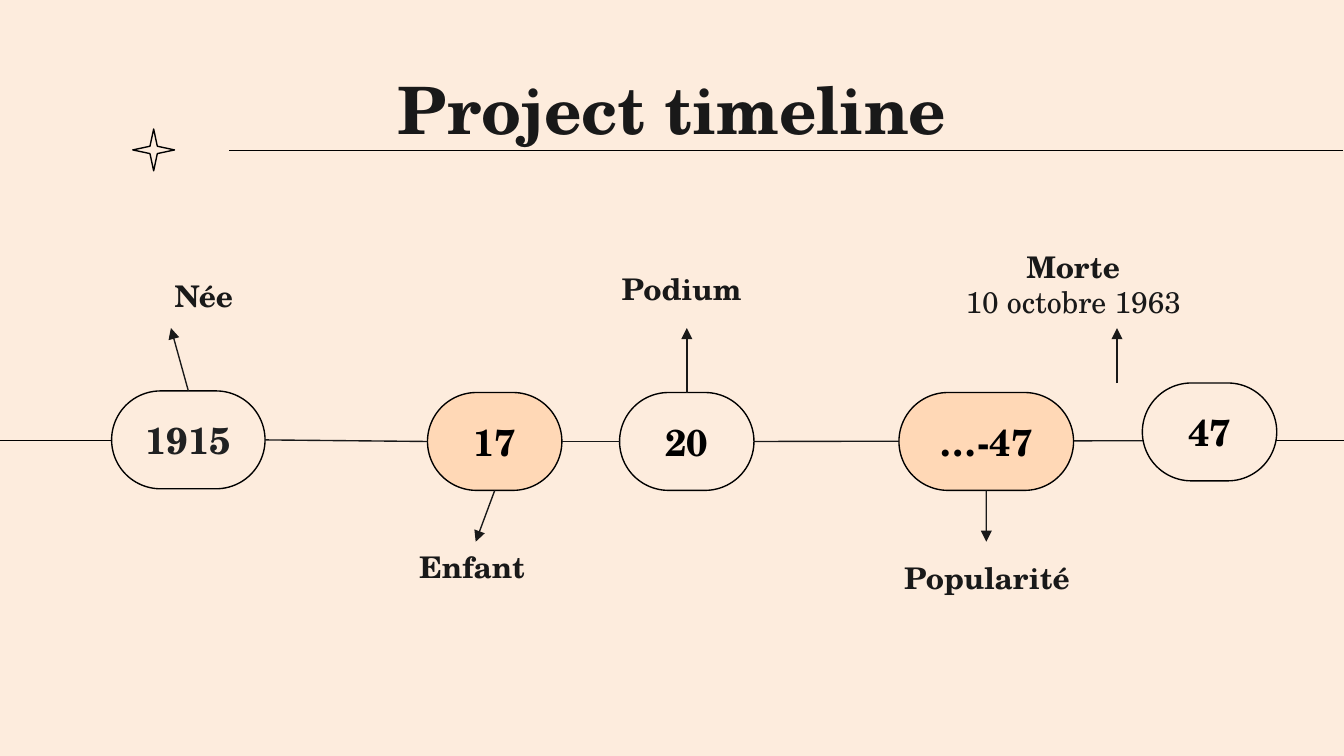
"""Build the project timeline slide."""
import lxml.etree
import pptx
import pptx.dml.color
import pptx.enum.shapes
import pptx.enum.text
import pptx.oxml.ns
import pptx.util
from pptx.util import Cm

RGBColor = pptx.dml.color.RGBColor
SHAPE = pptx.enum.shapes.MSO_SHAPE
CREAM = RGBColor(0xFD, 0xEC, 0xDD)
PEACH = RGBColor(0xFF, 0xD8, 0xB6)
BLACK = RGBColor(0x00, 0x00, 0x00)
INK = RGBColor(0x19, 0x19, 0x19)
SLATE = RGBColor(0x20, 0x21, 0x22)
FONT = "TeX Gyre Schola"
TOP, LEFT, BOTTOM, RIGHT = range(4)

TITLE = "Project timeline"
AXIS_Y = 8.33
PILL_HEIGHT = 1.85
ARROW_UP_Y, ARROW_DOWN_Y = 6.2, 10.24

PILLS = [
    ("1915", 2.11, 7.39, 2.9, CREAM, SLATE),
    ("17", 8.08, 7.42, 2.54, PEACH, BLACK),
    ("20", 11.71, 7.42, 2.54, CREAM, BLACK),
    ("…-47", 16.99, 7.42, 3.3, PEACH, BLACK),
    ("47", 21.59, 7.24, 2.54, CREAM, BLACK),
]
LABELS = [
    (["Née"], 1.3, 5.11),
    (["Enfant "], 6.45, 10.24),
    (["Podium "], 10.41, 4.98),
    (["Morte", "10 octobre 1963"], 17.73, 4.9),
    (["Popularité"], 16.1, 10.44),
]
ARROWS = [
    ("1915", TOP, 3.23, ARROW_UP_Y),
    ("17", BOTTOM, 8.99, ARROW_DOWN_Y),
    ("20", TOP, 12.98, ARROW_UP_Y),
    ("…-47", BOTTOM, 18.64, ARROW_DOWN_Y),
]
LINKS = [("1915", "17"), ("17", "20")]


def write(box, lines, size, color):
    frame = box.text_frame
    frame.word_wrap = True
    frame.vertical_anchor = pptx.enum.text.MSO_ANCHOR.MIDDLE
    frame.margin_left = frame.margin_right = Cm(0.25)
    frame.margin_top = frame.margin_bottom = Cm(0.25)
    frame.text = "\n".join(lines)
    for index, para in enumerate(frame.paragraphs):
        para.alignment = pptx.enum.text.PP_ALIGN.CENTER
        para.font.name = FONT
        para.font.size = pptx.util.Pt(size)
        para.font.bold = index == 0
        para.font.color.rgb = color


def add_text(page, lines, left, top, width, height, size):
    box = page.shapes.add_textbox(Cm(left), Cm(top), Cm(width), Cm(height))
    write(box, lines, size, INK)


def add_line(page, start, end, color, arrow=False):
    points = [Cm(value) for value in (*start, *end)]
    line = page.shapes.add_connector(
        pptx.enum.shapes.MSO_CONNECTOR.STRAIGHT, *points)
    line.line.color.rgb = color
    line.line.width = pptx.util.Pt(0.75)
    properties = line._element.spPr
    if arrow:
        outline = properties.find(pptx.oxml.ns.qn("a:ln"))
        lxml.etree.SubElement(
            outline, pptx.oxml.ns.qn("a:tailEnd"), type="triangle")
    lxml.etree.SubElement(properties, pptx.oxml.ns.qn("a:effectLst"))
    return line


def add_outlined(page, kind, left, top, width, height, adjustment):
    shape = page.shapes.add_shape(
        kind, Cm(left), Cm(top), Cm(width), Cm(height))
    shape.adjustments[0] = adjustment
    shape.shadow.inherit = False
    shape.fill.background()
    shape.line.color.rgb = BLACK
    shape.line.width = pptx.util.Pt(0.75)
    return shape


def main():
    deck = pptx.Presentation()
    deck.slide_width, deck.slide_height = Cm(25.4), Cm(14.29)
    page = deck.slides.add_slide(deck.slide_layouts[6])
    page.background.fill.solid()
    page.background.fill.fore_color.rgb = CREAM

    add_line(page, (25.38, 2.84), (4.32, 2.84), BLACK)
    add_text(page, [TITLE], 2, 1.24, 21.41, 1.6, 35)
    add_outlined(page, SHAPE.STAR_4_POINT, 2.51, 2.44, 0.79, 0.79, 0.125)

    add_line(page, (2.92, AXIS_Y), (-0.2, AXIS_Y), BLACK)
    late_axis = add_line(page, (14.25, AXIS_Y), (21.77, AXIS_Y), INK)
    add_line(page, (25.73, AXIS_Y), (22.23, AXIS_Y), BLACK)

    pills = {}
    for name, left, top, width, fill, color in PILLS:
        pill = add_outlined(page, SHAPE.ROUNDED_RECTANGLE,
                            left, top, width, PILL_HEIGHT, 0.5)
        pill.fill.solid()
        pill.fill.fore_color.rgb = fill
        write(pill, [name], 20, color)
        pills[name] = pill

    late_axis.begin_connect(pills["20"], RIGHT)
    for first, second in LINKS:
        link = add_line(page, (0, AXIS_Y), (25.4, AXIS_Y), INK)
        link.begin_connect(pills[first], RIGHT)
        link.end_connect(pills[second], LEFT)
    for name, side, x, y in ARROWS:
        arrow = add_line(page, (x, AXIS_Y), (x, y), INK, arrow=True)
        arrow.begin_connect(pills[name], side)
    add_line(page, (21.11, 7.24), (21.11, ARROW_UP_Y), INK, arrow=True)

    for lines, left, top in LABELS:
        add_text(page, lines, left, top, 5.11, 0.94, 16)
    deck.save("out.pptx")


if __name__ == "__main__":
    main()
